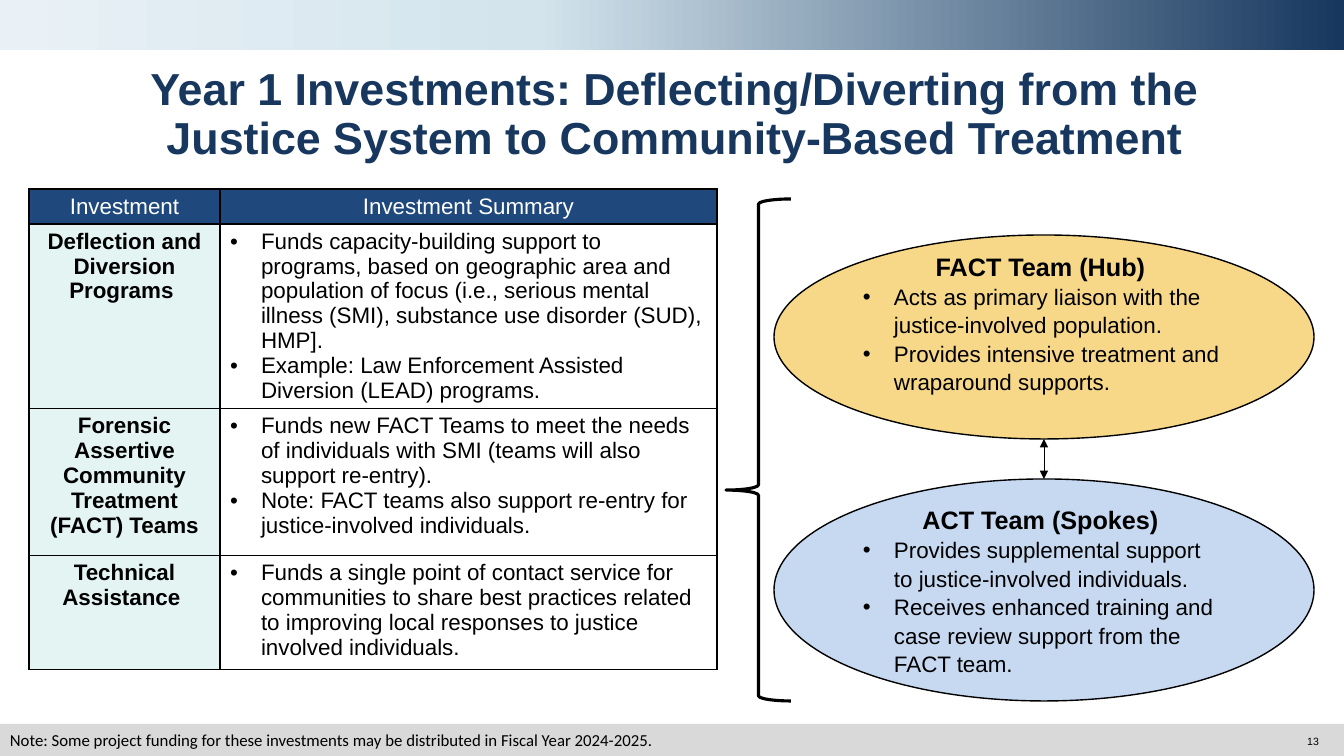
from copy import deepcopy

from lxml.etree import SubElement
from pptx import Presentation
from pptx.dml.color import RGBColor
from pptx.enum.shapes import MSO_CONNECTOR, MSO_SHAPE
from pptx.enum.text import MSO_ANCHOR, MSO_AUTO_SIZE, PP_ALIGN
from pptx.oxml.ns import qn
from pptx.util import Emu, Pt

COLORS = {
    "navy": "17375E", "header": "1F497D", "mint": "E3F4F3", "white": "FFFFFF",
    "black": "000000", "gold": "F6D888", "sky": "C6D9F1", "grey": "D9D9D9",
    "band_mid": "D3E4ED", "band_light": "E9F1F6",
}
INDENT = 31


def px(n):
    return Emu(round(n * 914400 / 100.8))


def rgb(name):
    return RGBColor.from_string(COLORS[name])


class SlideBuilder:
    """Holds the text style and the current slide."""

    def __init__(self, prs, font="Arial", size=16):
        self.font, self.size = font, size
        self.s = prs.slides.add_slide(prs.slide_layouts[5])

    def para(self, p, text, size=None, color="black", bold=False,
             align=PP_ALIGN.LEFT, spacing=None, font=None, bullet=False):
        p.text = text
        p.alignment = align
        if spacing:
            p.line_spacing = spacing
        for r in p.runs:
            r.font.name = font or self.font
            r.font.size = Pt(size or self.size)
            r.font.bold = bold
            r.font.color.rgb = rgb(color)
        if bullet:
            pPr = p._p.get_or_add_pPr()
            pPr.set("marL", str(px(INDENT)))
            pPr.set("indent", str(-px(INDENT)))
            SubElement(pPr, qn("a:buFont"), typeface="Arial")
            SubElement(pPr, qn("a:buChar"), char="•")

    def bullets(self, tf, items, start=0, **style):
        for i, item in enumerate(items, start):
            p = tf.paragraphs[0] if i == 0 else tf.add_paragraph()
            self.para(p, item, bullet=True, **style)

    def title(self, box, text):
        sp = self.s.shapes.title
        sp.left, sp.top, sp.width, sp.height = map(px, box)
        tf = sp.text_frame
        tf.word_wrap = True
        tf.auto_size = MSO_AUTO_SIZE.NONE
        tf.vertical_anchor = MSO_ANCHOR.TOP
        self.para(tf.paragraphs[0], text, 32, "navy", True, PP_ALIGN.CENTER, 0.9)

    def shape(self, kind, box, fill=None, line=None):
        sp = self.s.shapes.add_shape(kind, *map(px, box))
        sp.shadow.inherit = False
        if fill:
            sp.fill.solid()
            sp.fill.fore_color.rgb = rgb(fill)
        else:
            sp.fill.background()
        if line:
            sp.line.color.rgb = rgb("black")
            sp.line.width = Pt(line)
        else:
            sp.line.fill.background()
        sp.text_frame.word_wrap = True
        sp.text_frame.vertical_anchor = MSO_ANCHOR.MIDDLE
        return sp

    def band(self, box, stops):
        sp = self.shape(MSO_SHAPE.RECTANGLE, box)
        sp.fill.gradient()
        sp.fill.gradient_angle = 0
        first = sp.fill.gradient_stops[0]._gs
        first.addnext(deepcopy(first))
        for stop, (position, color) in zip(sp.fill.gradient_stops, stops):
            stop.position = position
            stop.color.rgb = rgb(color)

    def team(self, box, fill, heading, items, bottom=5):
        sp = self.shape(MSO_SHAPE.OVAL, box, fill, 1)
        tf = sp.text_frame
        tf.margin_bottom = px(bottom)
        self.para(tf.paragraphs[0], heading, 18, bold=True,
                  align=PP_ALIGN.CENTER, spacing=1.06)
        self.bullets(tf, items, start=1, spacing=1.06)

    def arrow(self, x1, y1, x2, y2):
        c = self.s.shapes.add_connector(MSO_CONNECTOR.STRAIGHT, *map(px, (x1, y1, x2, y2)))
        c.line.color.rgb = rgb("black")
        c.line.width = Pt(0.5)
        for end in ("a:headEnd", "a:tailEnd"):
            SubElement(c.line._get_or_add_ln(), qn(end), type="triangle")
        SubElement(c._element.spPr, qn("a:effectLst"))

    def text(self, box, text, size, align):
        tf = self.s.shapes.add_textbox(*map(px, box)).text_frame
        tf.word_wrap = True
        tf.vertical_anchor = MSO_ANCHOR.MIDDLE
        tf.margin_left = tf.margin_right = tf.margin_top = tf.margin_bottom = 0
        self.para(tf.paragraphs[0], text, size, align=align)

    def cell(self, cell, fill):
        tcPr = cell._tc.get_or_add_tcPr()
        for side in ("a:lnL", "a:lnR", "a:lnT", "a:lnB"):
            ln = SubElement(tcPr, qn(side), w=str(Pt(1)))
            solid = SubElement(ln, qn("a:solidFill"))
            SubElement(solid, qn("a:srgbClr"), val=COLORS["black"])
        cell.fill.solid()
        cell.fill.fore_color.rgb = rgb(fill)
        return cell.text_frame

    def table(self, left, top, widths, heights, header, rows):
        frame = self.s.shapes.add_table(len(heights), len(widths), px(left), px(top),
                                        px(sum(widths)), px(sum(heights)))
        tbl = frame.table
        tbl.horz_banding = False
        for col, width in zip(tbl.columns, widths):
            col.width = px(width)
        for row, height in zip(tbl.rows, heights):
            row.height = px(height)
        for c, label in enumerate(header):
            tf = self.cell(tbl.cell(0, c), "header")
            self.para(tf.paragraphs[0], label, color="white", align=PP_ALIGN.CENTER)
        for r, (name, summary) in enumerate(rows, 1):
            tf = self.cell(tbl.cell(r, 0), "mint")
            self.para(tf.paragraphs[0], name, bold=True, align=PP_ALIGN.CENTER)
            self.bullets(self.cell(tbl.cell(r, 1), "white"), summary)


INVESTMENTS = [
    ("Deflection and Diversion Programs ", [
        "Funds capacity-building support to programs, based on geographic area and "
        "population of focus (i.e., serious mental illness (SMI), substance use "
        "disorder (SUD), HMP].",
        "Example: Law Enforcement Assisted Diversion (LEAD) programs."]),
    ("Forensic Assertive Community Treatment (FACT) Teams", [
        "Funds new FACT Teams to meet the needs of individuals with SMI (teams will "
        "also support re-entry).",
        "Note: FACT teams also support re-entry for justice-involved individuals."]),
    ("Technical Assistance ", [
        "Funds a single point of contact service for communities to share best "
        "practices related to improving local responses to justice involved "
        "individuals."]),
]


def main():
    prs = Presentation()
    prs.slide_width, prs.slide_height = px(1344), px(756)
    b = SlideBuilder(prs)

    # Top band and title
    b.band((0, 0, 1344, 50), [(0, "band_light"), (0.4, "band_mid"), (1, "navy")])
    b.title((136, 62, 1078, 60), "Year 1 Investments: Deflecting/Diverting from the "
            "Justice System to Community-Based Treatment")

    # Investment table
    b.table(29, 189, (191, 497), (35, 184, 147, 114),
            ("Investment", "Investment Summary"), INVESTMENTS)

    # Teams, linked by an arrow and gathered by a brace
    b.team((774, 235, 540, 204), "gold", "FACT Team (Hub) ", [
        "Acts as primary liaison with the justice-involved population.",
        "Provides intensive treatment and wraparound supports."], bottom=34)
    b.team((774, 479, 540, 222), "sky", "ACT Team (Spokes) ", [
        "Provides supplemental support to justice-involved individuals.",
        "Receives enhanced training and case review support from the FACT team."])
    b.arrow(1044, 439, 1044, 479)
    brace = b.shape(MSO_SHAPE.LEFT_BRACE, (726, 199, 65, 502), line=2.25)
    brace.adjustments[0], brace.adjustments[1] = 0.08, 0.58

    # Footer note and slide number
    note = b.shape(MSO_SHAPE.RECTANGLE, (0, 724, 1344, 32), "grey")
    b.para(note.text_frame.paragraphs[0], "Note: Some project funding for these "
           "investments may be distributed in Fiscal Year 2024-2025.", 12, font="Calibri")
    b.text((1292, 735, 27, 13), "13", 7.5, PP_ALIGN.RIGHT)

    prs.save("out.pptx")


if __name__ == "__main__":
    main()
